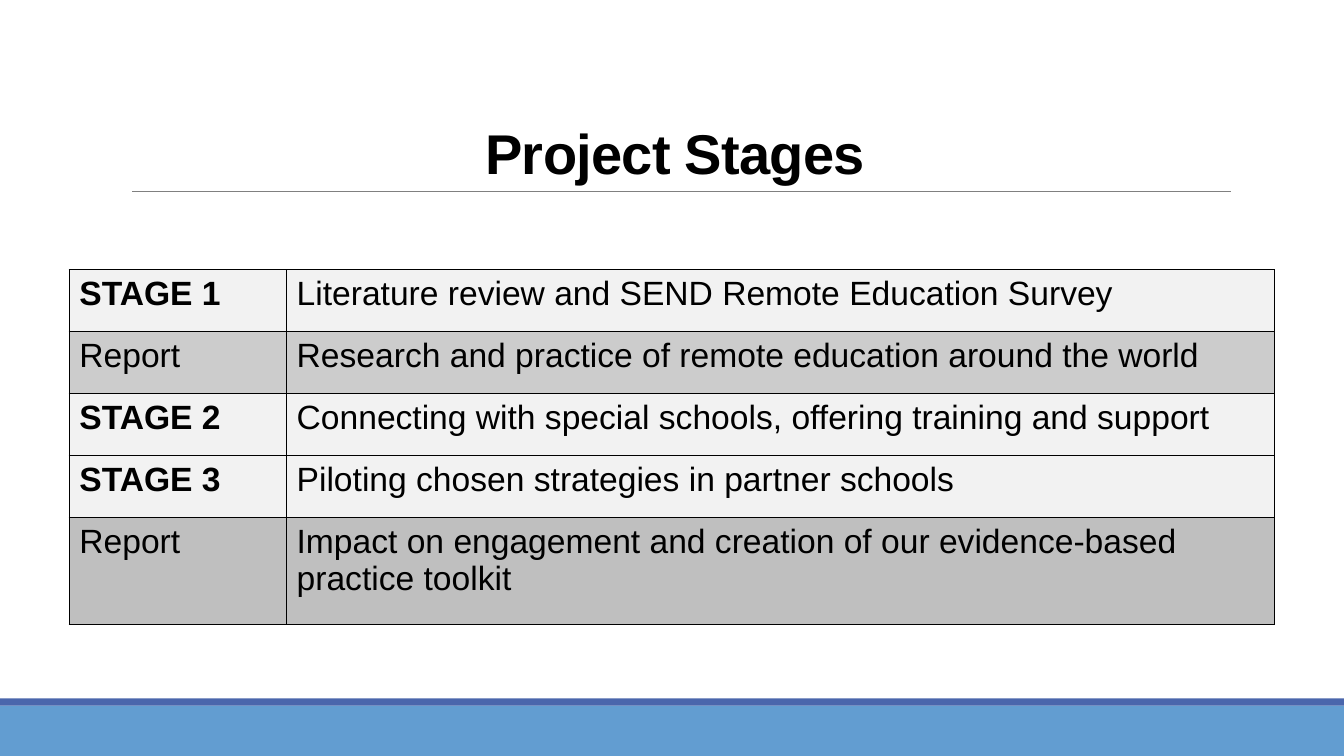
from lxml.etree import SubElement
from pptx import Presentation
from pptx.dml.color import RGBColor
from pptx.enum.shapes import MSO_CONNECTOR, MSO_SHAPE
from pptx.enum.text import MSO_ANCHOR, PP_ALIGN
from pptx.oxml.ns import qn
from pptx.util import Pt

PX = 9525
WIDTH, HEIGHT = 1280, 720
FONT = "Arial"
BLACK = RGBColor(0x00, 0x00, 0x00)
RULE_GRAY = RGBColor(0x80, 0x80, 0x80)
SKY = RGBColor(0x62, 0x9D, 0xD1)
INDIGO = RGBColor(0x4A, 0x66, 0xAC)
PALE = RGBColor(0xF2, 0xF2, 0xF2)
SILVER = RGBColor(0xCC, 0xCC, 0xCC)
GRAY = RGBColor(0xBF, 0xBF, 0xBF)

STAGES = [
    ("STAGE 1", "Literature review and SEND Remote Education Survey", PALE),
    ("Report", "Research and practice of remote education around the world", SILVER),
    ("STAGE 2", "Connecting with special schools, offering training and support", PALE),
    ("STAGE 3", "Piloting chosen strategies in partner schools", PALE),
    ("Report", "Impact on engagement and creation of our evidence-based practice toolkit", GRAY),
]


def px(*lengths):
    """Turn pixel lengths into EMU."""
    return [n * PX for n in lengths]


def add_run(p, text, size, bold):
    """Add one styled run to a paragraph."""
    r = p.add_run()
    r.text = text
    r.font.name = FONT
    r.font.size = Pt(size)
    r.font.bold = bold
    r.font.color.rgb = BLACK
    return r


def add_footer(s, x, y, w, h):
    """Draw the footer band with its thin strip on top."""
    strip = 7
    for top, height, color in ((y + strip, h - strip, SKY), (y, strip, INDIGO)):
        sp = s.shapes.add_shape(MSO_SHAPE.RECTANGLE, *px(x, top, w, height))
        sp.shadow.inherit = False
        sp.fill.solid()
        sp.fill.fore_color.rgb = color
        sp.line.fill.background()


def add_title(s, x, y, w, h):
    """Place the title at the bottom of its box, over a thin rule."""
    left, right, bottom = x + 11, x + w + 1, y + h
    line = s.shapes.add_connector(MSO_CONNECTOR.STRAIGHT, *px(left, bottom, right, bottom))
    line.line.color.rgb = RULE_GRAY
    line.line.width = Pt(0.5)
    SubElement(line._element.spPr, qn("a:effectLst"))

    tf = s.shapes.add_textbox(*px(x, y, w, h)).text_frame
    tf.word_wrap = True
    tf.vertical_anchor = MSO_ANCHOR.BOTTOM
    p = tf.paragraphs[0]
    p.alignment = PP_ALIGN.CENTER
    p.line_spacing = 0.85
    r = add_run(p, "Project Stages", 40, True)
    r.font._element.set("spc", "-50")


def style_cell(cell, color):
    """Give a cell black borders and a solid fill."""
    tcPr = cell._tc.get_or_add_tcPr()
    for side in ("a:lnL", "a:lnR", "a:lnT", "a:lnB"):
        ln = SubElement(tcPr, qn(side), w=str(Pt(1)))
        fill = SubElement(ln, qn("a:solidFill"))
        SubElement(fill, qn("a:srgbClr"), val=str(BLACK))
    cell.fill.solid()
    cell.fill.fore_color.rgb = color


def add_stages(s, x, y, w, h):
    """Lay out the table of stages, with a taller last row."""
    label_w, row_h = 207, 59
    last_h = h - row_h * (len(STAGES) - 1)
    table = s.shapes.add_table(len(STAGES), 2, *px(x, y, w, h)).table
    for column, width in zip(table.columns, px(label_w, w - label_w)):
        column.width = width
    for row, (label, text, color) in zip(table.rows, STAGES):
        row.height = row_h * PX
        for cell, words in zip(row.cells, (label, text)):
            style_cell(cell, color)
            bold = words.startswith("STAGE")
            add_run(cell.text_frame.paragraphs[0], words, 24, bold)
    table.rows[len(STAGES) - 1].height = last_h * PX


def main():
    """Build and save the slide."""
    prs = Presentation()
    prs.slide_width, prs.slide_height = px(WIDTH, HEIGHT)
    s = prs.slides.add_slide(prs.slide_layouts[6])
    add_footer(s, 0, 665, WIDTH, 55)
    add_title(s, 115, 30, 1056, 152)
    add_stages(s, 66, 257, 1148, 338)
    prs.save("out.pptx")


if __name__ == "__main__":
    main()
